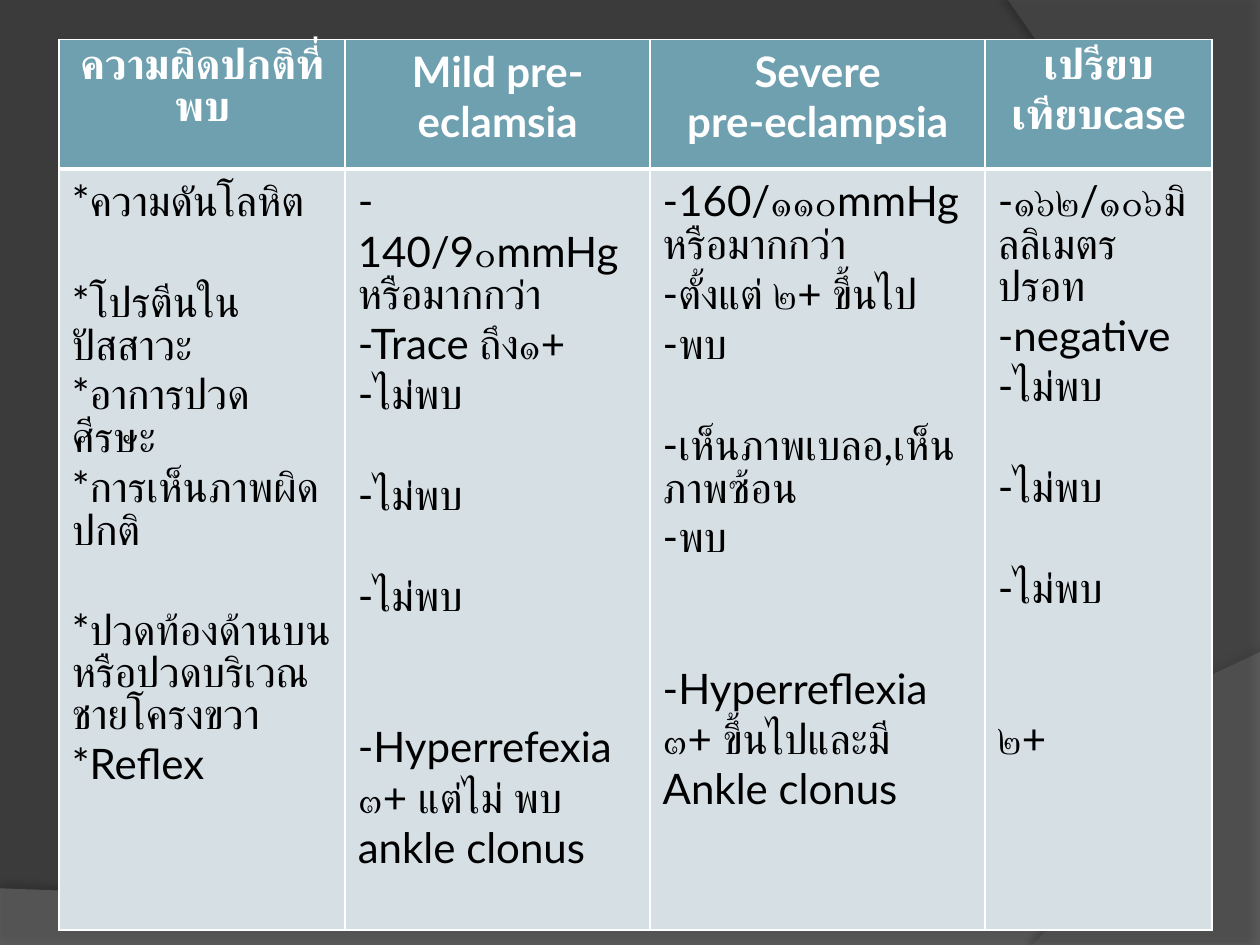
from dataclasses import dataclass

from lxml.etree import SubElement
from pptx import Presentation
from pptx.dml.color import RGBColor
from pptx.enum.text import PP_ALIGN
from pptx.oxml.ns import qn
from pptx.util import Inches, Pt


@dataclass(frozen=True)
class Theme:
    background: str = "3B3B3B"
    wave: str = "7F7F7F"
    arc: str = "5E5E5E"
    header: str = "6EA0B0"
    body: str = "D5DFE4"
    light: str = "FFFFFF"
    dark: str = "000000"
    font: str = "Lato"
    size: float = 24
    line: float = 28.8


def curve(start, first, second, end, steps=32):
    """Points along a cubic curve, without its start."""
    points = []
    for step in range(1, steps + 1):
        t = step / steps
        weights = ((1 - t) ** 3, 3 * t * (1 - t) ** 2, 3 * t * t * (1 - t), t ** 3)
        points.append(tuple(sum(w * p[axis] for w, p in zip(weights, (start, first, second, end)))
                            for axis in (0, 1)))
    return points


class Deck:
    """Style and current slide; lengths are shares of the slide's size."""

    def __init__(self, theme, width=10, height=7.5):
        self.theme = theme
        self.presentation = Presentation()
        self.width = self.presentation.slide_width = Inches(width)
        self.height = self.presentation.slide_height = Inches(height)
        self.slide = self.presentation.slides.add_slide(self.presentation.slide_layouts[6])
        fill = self.slide.background.fill
        fill.solid()
        fill.fore_color.rgb = RGBColor.from_string(theme.background)

    def x(self, share):
        return round(share * self.width)

    def y(self, share):
        return round(share * self.height)

    def backdrop(self, points, color, opacity, shade, blur, direction):
        corners = [(self.x(x), self.y(y)) for x, y in points]
        builder = self.slide.shapes.build_freeform(*corners[0], scale=1.0)
        builder.add_line_segments(corners[1:], close=True)
        shape = builder.convert_to_shape()
        shape.line.fill.background()
        shape.fill.solid()
        shape.fill.fore_color.rgb = RGBColor.from_string(color)
        solid = shape._element.spPr.find(qn("a:solidFill"))
        SubElement(solid[0], qn("a:alpha"), val=str(opacity * 1000))
        # Soft shadow along the curved edge
        shape.shadow.inherit = False
        effects = shape._element.spPr.find(qn("a:effectLst"))
        shadow = SubElement(effects, qn("a:outerShdw"), blurRad=str(Pt(blur)),
                            dist=str(Pt(4)), dir=str(direction * 60000))
        tone = SubElement(shadow, qn("a:srgbClr"), val=self.theme.dark)
        SubElement(tone, qn("a:alpha"), val=str(shade * 1000))

    def borders(self, cell, bottom):
        properties = cell._tc.get_or_add_tcPr()
        sides = (("lnL", 1), ("lnR", 1), ("lnT", 1), ("lnB", bottom))
        for position, (side, width) in enumerate(sides):
            line = SubElement(properties, qn(f"a:{side}"), w=str(Pt(width)))
            SubElement(SubElement(line, qn("a:solidFill")), qn("a:srgbClr"), val=self.theme.light)
            properties.insert(position, line)

    def cell(self, cell, entries, is_header):
        theme = self.theme
        cell.fill.solid()
        cell.fill.fore_color.rgb = RGBColor.from_string(theme.header if is_header else theme.body)
        self.borders(cell, 3 if is_header else 1)
        for index, (gap, text) in enumerate(entries):
            frame = cell.text_frame
            paragraph = frame.add_paragraph() if index else frame.paragraphs[0]
            paragraph.alignment = PP_ALIGN.CENTER if is_header else PP_ALIGN.LEFT
            paragraph.space_before = Pt(gap * theme.line)
            for part, words in enumerate(text.split("\n")):
                if part:
                    paragraph.add_line_break()
                run = paragraph.add_run()
                run.text = words
                run.font.name = theme.font
                run.font.size = Pt(theme.size)
                run.font.bold = is_header
                run.font.color.rgb = RGBColor.from_string(theme.light if is_header else theme.dark)

    def table(self, left, top, columns, rows, contents):
        table = self.slide.shapes.add_table(
            len(rows), len(columns), self.x(left), self.y(top),
            self.x(sum(columns)), self.y(sum(rows))).table
        for column, share in zip(table.columns, columns):
            column.width = self.x(share)
        for row, share in zip(table.rows, rows):
            row.height = self.y(share)
        for row, row_contents in enumerate(contents):
            for column, entries in enumerate(row_contents):
                self.cell(table.cell(row, column), entries, row == 0)


# Each entry is (blank lines of space above, text)
HEADINGS = [
    [(0, "ความผิดปกติที่พบ")],
    [(0, "Mild pre-eclamsia")],
    [(0, "Severe"), (0, "pre-eclampsia")],
    [(0, "เปรียบเทียบcase")],
]
FINDINGS = [
    [(0, "*ความดันโลหิต"), (1, "*โปรตีนในปัสสาวะ"), (0, "*อาการปวด\nศีรษะ"),
     (0, "*การเห็นภาพผิดปกติ"), (1, "*ปวดท้องด้านบนหรือปวดบริเวณ"),
     (0, "ชายโครงขวา"), (0, "*Reflex")],
    [(0, "- 140/9๐mmHg หรือมากกว่า"), (0, "-Trace ถึง๑+"), (0, "-ไม่พบ"),
     (1, "-ไม่พบ"), (1, "-ไม่พบ"), (2, "-Hyperrefexia ๓+ แต่ไม่ พบ ankle clonus")],
    [(0, "-160/๑๑๐mmHg หรือมากกว่า"), (0, "-ตั้งแต่ ๒+ ขึ้นไป"), (0, "-พบ"),
     (1, "-เห็นภาพเบลอ,เห็นภาพซ้อน"), (0, "-พบ"),
     (2, "-Hyperreflexia ๓+ ขึ้นไปและมี Ankle clonus")],
    [(0, "-๑๖๒/๑๐๖มิลลิเมตรปรอท"), (0, "-negative"), (0, "-ไม่พบ"),
     (1, "-ไม่พบ"), (1, "-ไม่พบ"), (2, "๒+")],
]


def main():
    theme = Theme()
    deck = Deck(theme)

    # Curved backdrop: wave along the bottom, arc on the right
    wave = [(0, 0.94), (0, 1), (1, 1), (1, 0.69)]
    wave += curve(wave[-1], (0.56, 0.97), (0.39, 0.96), wave[0])
    deck.backdrop(wave, theme.wave, 45, 35, 4, 270)
    arc = [(1, 0), (1, 1), (0.82, 1)]
    arc += curve(arc[-1], (0.94, 0.83), (1.02, 0.4), (0.8, 0))
    deck.backdrop(arc, theme.arc, 40, 45, 4, 180)

    # Comparison of findings with the case
    deck.table(0.047, 0.042, columns=(0.227, 0.242, 0.266, 0.18), rows=(0.137, 0.805),
               contents=[HEADINGS, FINDINGS])

    deck.presentation.save("out.pptx")


if __name__ == "__main__":
    main()
